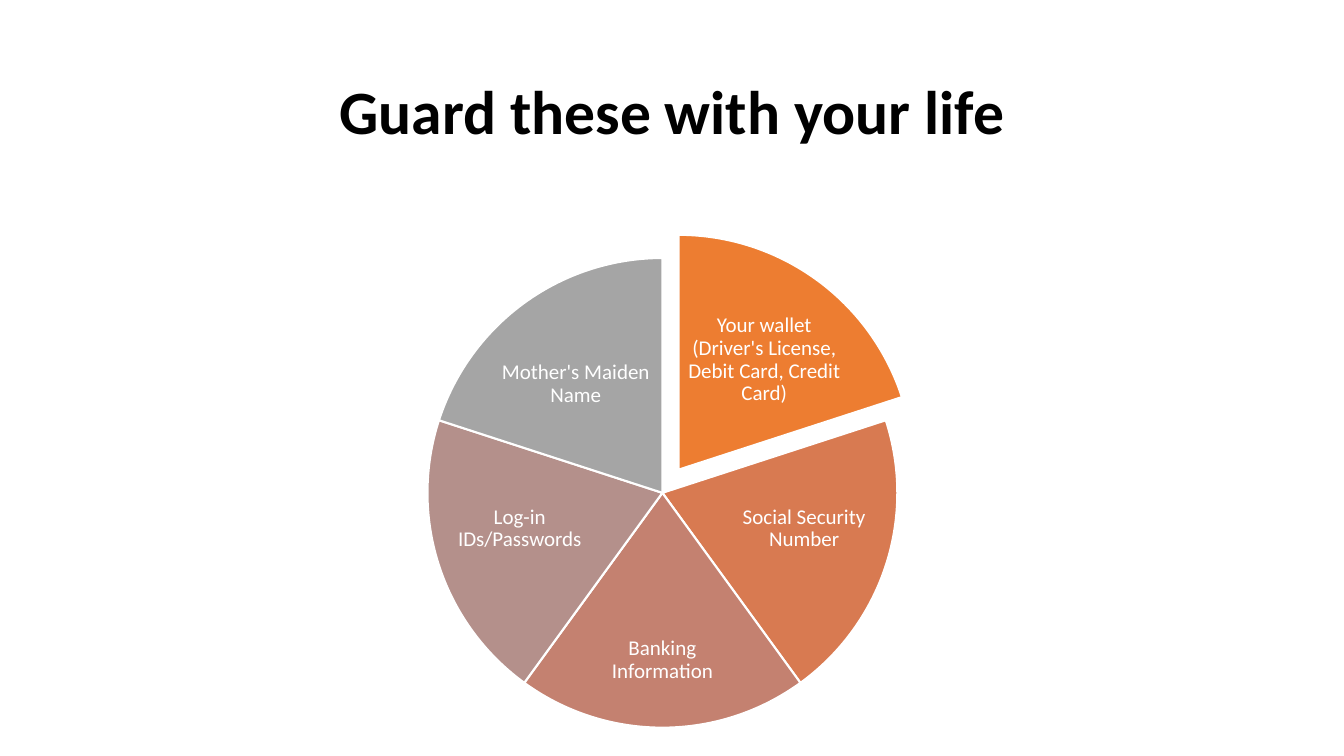
from pptx import Presentation
from pptx.dml.color import RGBColor
from pptx.enum.shapes import MSO_SHAPE
from pptx.enum.text import MSO_ANCHOR, MSO_AUTO_SIZE, PP_ALIGN
from pptx.util import Inches, Pt

TITLE = "Guard these with your life"
COLORS = {
    "black": "000000",
    "white": "FFFFFF",
    "wallet": "ED7D31",
    "social": "D87A51",
    "bank": "C48170",
    "login": "B4908B",
    "maiden": "A5A5A5",
}
SLICES = [
    ("wallet", "Your wallet (Driver's License, Debit Card, Credit Card)", (6.79, 3.03, 1.58, 1.08)),
    ("social", "Social Security Number", (7.28, 4.66, 1.39, 1.17)),
    ("bank", "Banking Information", (5.74, 6.05, 1.66, 1)),
    ("login", "Log-in IDs/Passwords", (4.46, 4.66, 1.39, 1.17)),
    ("maiden", "Mother's Maiden Name", (4.92, 3.27, 1.58, 1.08)),
]
FONT = "Calibri"
LEFT, TOP, SIZE = 4.24, 2.56, 4.66
PULL = {"wallet": (0.16, -0.23)}
START = 270
STEP = 360 / len(SLICES)
ANGLE_UNIT = 0.6


def color(name):
    return RGBColor.from_string(COLORS[name])


def write(shape, text, size, tone, bold=False):
    frame = shape.text_frame
    frame.word_wrap = True
    frame.auto_size = MSO_AUTO_SIZE.NONE
    frame.vertical_anchor = MSO_ANCHOR.MIDDLE
    para = frame.paragraphs[0]
    para.alignment = PP_ALIGN.CENTER
    para.line_spacing = 0.9
    run = para.add_run()
    run.text = text
    run.font.name = FONT
    run.font.size = Pt(size)
    run.font.bold = bold
    run.font.color.rgb = color(tone)
    return frame


def add_slice(slide, index, name):
    shift, lift = PULL.get(name, (0, 0))
    pie = slide.shapes.add_shape(
        MSO_SHAPE.PIE, Inches(LEFT + shift), Inches(TOP + lift), Inches(SIZE), Inches(SIZE)
    )
    for side in range(2):
        angle = (START + (index + side) * STEP) % 360
        pie.adjustments[side] = angle * ANGLE_UNIT
    pie.shadow.inherit = False
    pie.fill.solid()
    pie.fill.fore_color.rgb = color(name)
    pie.line.color.rgb = color("white")
    pie.line.width = Pt(1.5)


def add_label(slide, text, place):
    box = slide.shapes.add_textbox(*map(Inches, place))
    frame = write(box, text, 15, "white")
    frame.margin_left = frame.margin_right = Inches(0.02)
    frame.margin_top = frame.margin_bottom = Inches(0.02)


def main():
    deck = Presentation()
    deck.slide_width, deck.slide_height = Inches(13.33), Inches(7.5)
    slide = deck.slides.add_slide(deck.slide_layouts[5])
    title = slide.shapes.title
    title.left, title.top = Inches(1.32), Inches(0.31)
    title.width, title.height = Inches(10.7), Inches(1.65)
    write(title, TITLE, 44, "black", True)
    for index, (name, text, place) in enumerate(SLICES):
        add_slice(slide, index, name)
        add_label(slide, text, place)
    deck.save("out.pptx")


if __name__ == "__main__":
    main()
